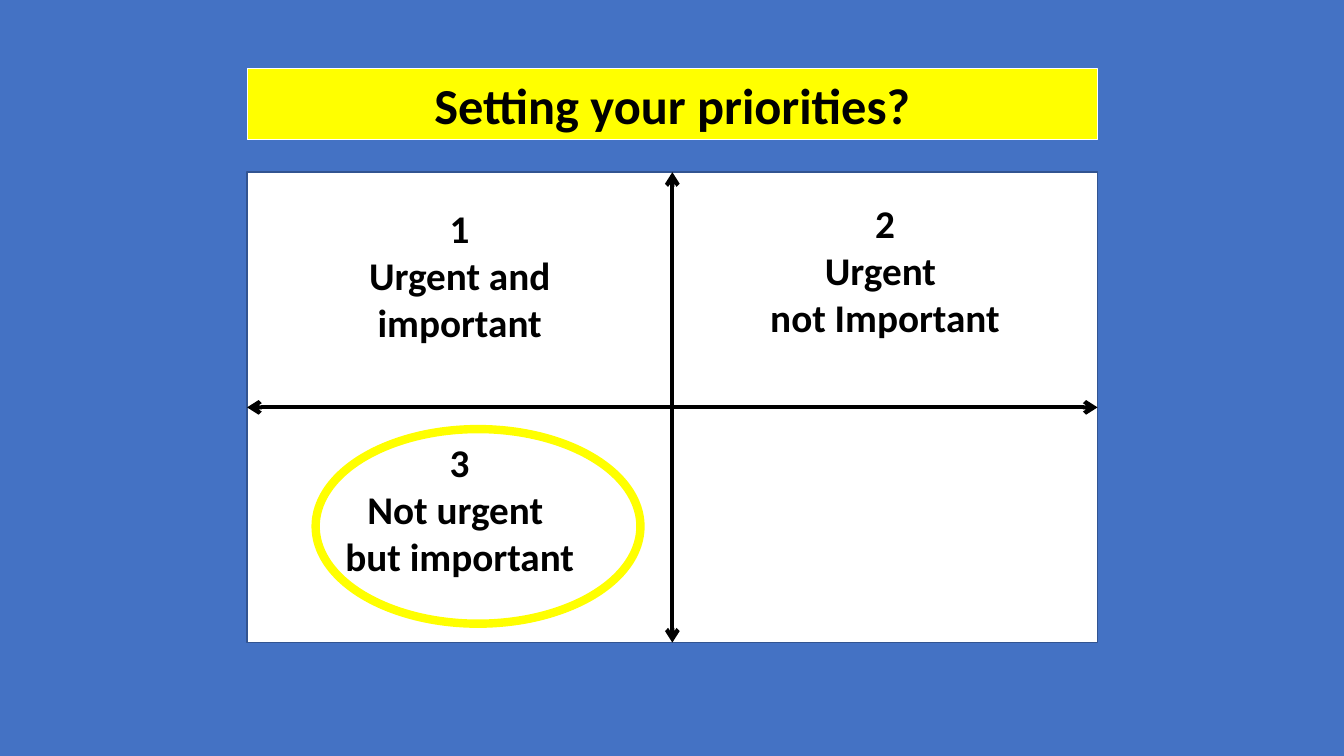
from lxml.etree import SubElement
from pptx import Presentation
from pptx.dml.color import RGBColor
from pptx.enum.shapes import MSO_CONNECTOR, MSO_SHAPE
from pptx.enum.text import MSO_ANCHOR, PP_ALIGN
from pptx.oxml.ns import qn
from pptx.util import Pt

COLORS = {
    "background": "4472C4",
    "highlight": "FFFF00",
    "panel": "FFFFFF",
    "panel_border": "325491",
    "ink": "000000",
}
FONT = "Calibri"
LEFT, WIDTH = 176.5, 607.5
LABEL_WIDTH, LABEL_HEIGHT = 208, 114

# Column, row, distance of the label from the quadrant's top, lines
QUADRANTS = [
    (0, 0, 16.5, ["1", "Urgent and important"]),
    (1, 0, 12.5, ["2", "Urgent ", "not Important"]),
    (0, 1, 15.5, ["3", "Not urgent ", "but important"]),
]


def color(name):
    return RGBColor.from_string(COLORS[name])


def set_fill(shape, name):
    shape.fill.solid()
    shape.fill.fore_color.rgb = color(name)


def set_line(shape, name, width):
    shape.line.color.rgb = color(name)
    shape.line.width = Pt(width)


def write_lines(text_frame, lines, size):
    text_frame.word_wrap = True
    text_frame.vertical_anchor = MSO_ANCHOR.MIDDLE
    text_frame.text = "\n".join(lines)
    for paragraph in text_frame.paragraphs:
        paragraph.alignment = PP_ALIGN.CENTER
        paragraph.line_spacing = 1.0
        paragraph.space_before = Pt(0)
        font = paragraph.font
        font.name, font.size, font.bold = FONT, Pt(size), True
        font.color.rgb = color("ink")


def add_title(slide, left, top, width, height):
    title = slide.shapes.title
    title.left, title.top = Pt(left), Pt(top)
    title.width, title.height = Pt(width), Pt(height)
    set_fill(title, "highlight")
    set_line(title, "panel", 0.75)
    write_lines(title.text_frame, ["Setting your priorities?"], 36)


def add_axis(slide, start, end):
    """Draw a line with an arrowhead at each end."""
    axis = slide.shapes.add_connector(
        MSO_CONNECTOR.STRAIGHT, *map(Pt, (*start, *end)))
    set_line(axis, "ink", 3)
    outline = axis.line._get_or_add_ln()
    for end_tag in ("a:headEnd", "a:tailEnd"):
        SubElement(outline, qn(end_tag), type="arrow")
    SubElement(axis._element.spPr, qn("a:effectLst"))


def add_matrix(slide, left, top, width, height):
    """Draw the panel, its two axes, the labels and the highlight ring."""
    panel = slide.shapes.add_shape(
        MSO_SHAPE.RECTANGLE, Pt(left), Pt(top), Pt(width), Pt(height))
    panel.shadow.inherit = False
    set_fill(panel, "panel")
    set_line(panel, "panel_border", 1)

    column_width, row_height = width / 2, height / 2
    center_x, center_y = left + column_width, top + row_height
    add_axis(slide, (center_x, top), (center_x, top + height))
    add_axis(slide, (left, center_y), (left + width, center_y))

    inset = (column_width - LABEL_WIDTH) / 2
    for column, row, offset, lines in QUADRANTS:
        label = slide.shapes.add_textbox(
            Pt(left + column * column_width + inset),
            Pt(top + row * row_height + offset),
            Pt(LABEL_WIDTH), Pt(LABEL_HEIGHT))
        write_lines(label.text_frame, lines, 28)

    ring = slide.shapes.add_shape(
        MSO_SHAPE.OVAL, Pt(left + 49), Pt(center_y + 15.5), Pt(232), Pt(139))
    ring.shadow.inherit = False
    ring.fill.background()
    set_line(ring, "highlight", 6)


def main():
    presentation = Presentation()
    presentation.slide_width, presentation.slide_height = Pt(960), Pt(540)
    title_only = presentation.slide_layouts.get_by_name("Title Only")
    slide = presentation.slides.add_slide(title_only)
    set_fill(slide.background, "background")
    add_title(slide, LEFT, 49, WIDTH, 51)
    add_matrix(slide, LEFT, 123, WIDTH, 336)
    presentation.save("out.pptx")


if __name__ == "__main__":
    main()
